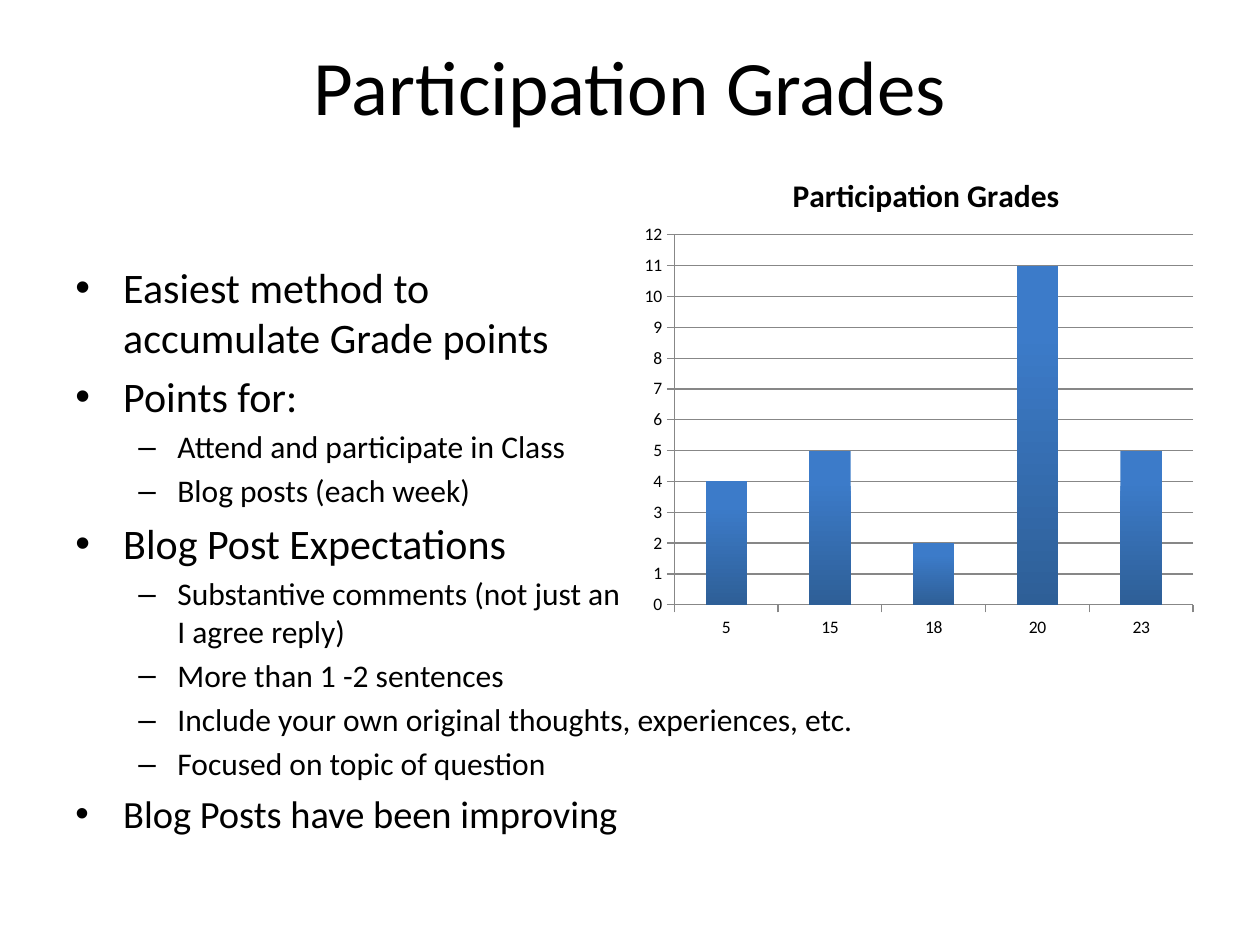
from lxml import etree
from pptx import Presentation
from pptx.chart.data import CategoryChartData
from pptx.dml.color import RGBColor
from pptx.enum.chart import XL_CHART_TYPE as ChartType, XL_TICK_MARK as TickMark
from pptx.enum.text import MSO_ANCHOR as Anchor, PP_ALIGN as Align
from pptx.oxml import parse_xml
from pptx.oxml.ns import nsdecls, qn
from pptx.util import Inches, Pt

WIDTH, HEIGHT = Inches(10), Inches(7.5)
FONT = "Calibri"
BLACK, GREY = "000000", "878787"
BAR_TOP, BAR_BOTTOM = "3C7BC9", "2E5F97"
TITLE = "Participation Grades"
LEVELS = [("•", 0.38, 0.38), ("–", 0.81, 0.31)]
BULLETS = [
    (0, 24, "Easiest method to \vaccumulate Grade points"),
    (0, 24, "Points for:"),
    (1, 18, "Attend and participate in Class"),
    (1, 18, "Blog posts (each week)"),
    (0, 24, "Blog Post Expectations"),
    (1, 18, "Substantive comments (not just an\vI agree reply)"),
    (1, 18, "More than 1 -2 sentences"),
    (1, 18, "Include your own original thoughts, experiences, etc."),
    (1, 18, "Focused on topic of question"),
    (0, 22, "Blog Posts have been improving"),
]
GRADES = {"5": 4, "15": 5, "18": 2, "20": 11, "23": 5}
PLOT_AREA = {"x": 0.075, "y": 0.167, "w": 0.876, "h": 0.739}


def color(hex_code):
    return RGBColor.from_string(hex_code)


def area(left, top, width, height):
    return [round(share * side) for share, side in
            zip((left, top, width, height), (WIDTH, HEIGHT) * 2)]


def style_font(font, size, bold=False):
    font.name, font.size, font.bold = FONT, Pt(size), bold
    font.color.rgb = color(BLACK)


def add_text_frame(slide, box):
    text_frame = slide.shapes.add_textbox(*box).text_frame
    text_frame.word_wrap = True
    return text_frame


def add_title(slide, text, box):
    text_frame = add_text_frame(slide, box)
    text_frame.vertical_anchor = Anchor.MIDDLE
    text_frame.text = text
    paragraph = text_frame.paragraphs[0]
    paragraph.alignment = Align.CENTER
    style_font(paragraph.runs[0].font, 44)


def set_bullet(paragraph, level):
    character, margin, hanging = LEVELS[level]
    paragraph.level = level
    properties = paragraph._p.get_or_add_pPr()
    properties.set("marL", str(Inches(margin)))
    properties.set("indent", str(-Inches(hanging)))
    etree.SubElement(properties, qn("a:buFont"), typeface="Arial")
    etree.SubElement(properties, qn("a:buChar"), char=character)


def add_bullets(slide, items, box):
    text_frame = add_text_frame(slide, box)
    text_frame.text = "\n".join(text for _, _, text in items)
    for paragraph, (level, size, _) in zip(text_frame.paragraphs, items):
        paragraph.space_before = Pt(round(size * 0.2, 1))
        set_bullet(paragraph, level)
        for run in paragraph.runs:
            style_font(run.font, size)


def style_line(line):
    line.color.rgb = color(GREY)
    line.width = Pt(0.75)


def style_axes(chart):
    for axis in (chart.category_axis, chart.value_axis):
        axis.major_tick_mark = TickMark.OUTSIDE
        axis.minor_tick_mark = TickMark.NONE
        style_line(axis.format.line)
    values = chart.value_axis
    values.minimum_scale, values.maximum_scale, values.major_unit = 0, 12, 1
    values.has_major_gridlines = True
    style_line(values.major_gridlines.format.line)


def place_plot(chart, shares):
    modes = "".join(f'<c:{side}Mode val="edge"/>' for side in "xy")
    sizes = "".join(f'<c:{key} val="{share}"/>' for key, share in shares.items())
    layout = parse_xml(
        f'<c:layout {nsdecls("c")}><c:manualLayout><c:layoutTarget val="inner"/>'
        f"{modes}{sizes}</c:manualLayout></c:layout>")
    plot_area = chart._chartSpace.chart.plotArea
    for previous in plot_area.findall(qn("c:layout")):
        plot_area.remove(previous)
    plot_area.insert(0, layout)


def fill_bars(plot):
    plot.gap_width = 150
    plot.vary_by_categories = False
    fill = plot.series[0].format.fill
    fill.gradient()
    fill.gradient_angle = 270
    for stop, hex_code in zip(fill.gradient_stops, (BAR_TOP, BAR_BOTTOM)):
        stop.color.rgb = color(hex_code)
    fill.gradient_stops[0].position = 0.2


def add_column_chart(slide, title, grades, box):
    data = CategoryChartData()
    data.categories = list(grades)
    data.add_series("Series 1", grades.values())
    chart = slide.shapes.add_chart(ChartType.COLUMN_CLUSTERED, *box, data).chart
    style_font(chart.font, 10)
    chart.has_legend = False
    chart.has_title = True
    title_frame = chart.chart_title.text_frame
    title_frame.text = title
    style_font(title_frame.paragraphs[0].runs[0].font, 18, bold=True)
    style_axes(chart)
    fill_bars(chart.plots[0])
    place_plot(chart, PLOT_AREA)


def main():
    presentation = Presentation()
    presentation.slide_width, presentation.slide_height = WIDTH, HEIGHT
    slide = presentation.slides.add_slide(presentation.slide_layouts[6])
    add_title(slide, TITLE, area(0.05, 0.03, 0.9, 0.12))
    add_bullets(slide, BULLETS, area(0.05, 0.27, 0.94, 0.66))
    add_column_chart(slide, TITLE, GRADES, area(0.5, 0.16, 0.47, 0.53))
    presentation.save("out.pptx")


if __name__ == "__main__":
    main()
